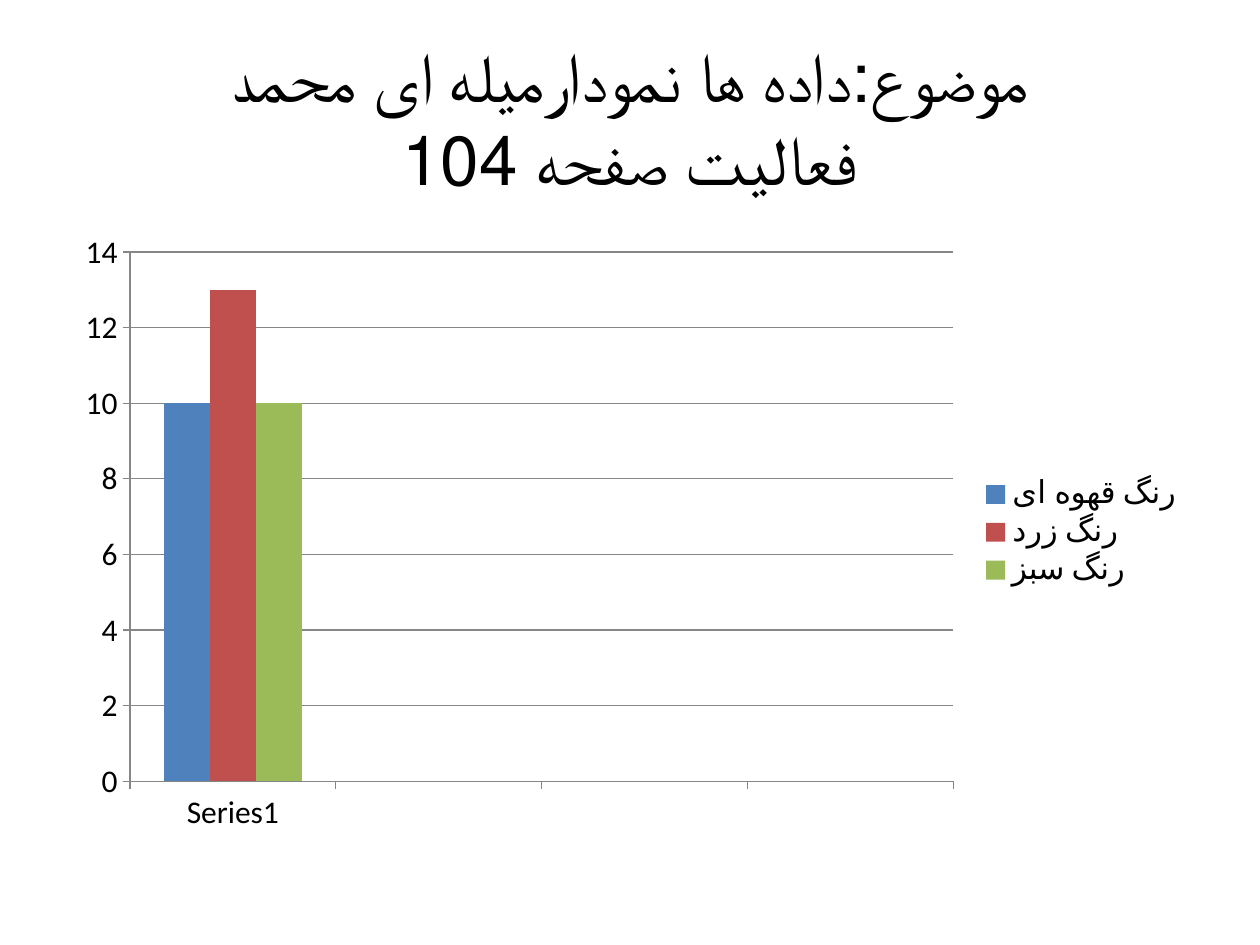
from pptx import Presentation
from pptx import util as u
from pptx.chart.data import CategoryChartData
from pptx.dml.color import RGBColor
from pptx.enum import chart as ch, text


def colour(value):
    return RGBColor.from_string(value)


def set_values(target, values):
    for name, value in values.items():
        setattr(target, name, value)


class SlideBuilder:
    font = "Calibri"
    ink = "000000"
    rule = "868686"

    def __init__(self, deck):
        self.slide = deck.slides.add_slide(deck.slide_layouts[6])

    def style_font(self, font, size):
        set_values(font, {"name": self.font, "size": u.Pt(size)})
        font.color.rgb = colour(self.ink)

    def style_line(self, line):
        line.color.rgb = colour(self.rule)
        line.width = u.Pt(0.75)

    def title(self, place, lines, size):
        box = self.slide.shapes.add_textbox(*map(u.Inches, place))
        set_values(box.text_frame, {
            "word_wrap": True,
            "vertical_anchor": text.MSO_ANCHOR.MIDDLE,
        })
        para = box.text_frame.paragraphs[0]
        para.alignment = text.PP_ALIGN.CENTER
        para._p.get_or_add_pPr().set("rtl", "1")
        for index, line in enumerate(lines):
            if index:
                para.add_line_break()
            span = para.add_run()
            span.text = line
            self.style_font(span.font, size)

    def column_chart(self, place, categories, series, size):
        data = CategoryChartData()
        data.categories = categories
        for name, value, _ in series:
            data.add_series(name, [value] + [None] * (len(categories) - 1))
        frame = self.slide.shapes.add_chart(
            ch.XL_CHART_TYPE.COLUMN_CLUSTERED, *map(u.Inches, place), data)
        chart = frame.chart
        set_values(chart, {"has_title": False, "has_legend": True})
        set_values(chart.legend, {
            "position": ch.XL_LEGEND_POSITION.RIGHT,
            "include_in_layout": False,
        })
        self.style_font(chart.font, size)
        plot = chart.plots[0]
        set_values(plot, {"gap_width": 150, "overlap": 0, "vary_by_categories": False})
        for bars, (_, _, fill) in zip(plot.series, series):
            bars.format.fill.solid()
            bars.format.fill.fore_color.rgb = colour(fill)
        for axis in (chart.category_axis, chart.value_axis):
            axis.major_tick_mark = ch.XL_TICK_MARK.OUTSIDE
            self.style_line(axis.format.line)
        chart.value_axis.has_major_gridlines = True
        self.style_line(chart.value_axis.major_gridlines.format.line)


def main():
    deck = Presentation()
    set_values(deck, {"slide_width": u.Inches(10), "slide_height": u.Inches(7.5)})
    page = SlideBuilder(deck)
    page.title(
        (0.5, 0.3, 9, 1.25),
        ["موضوع:داده ها نمودارمیله ای محمد", "فعالیت صفحه 104"],
        39.6)
    page.column_chart(
        (0.5, 1.75, 9, 4.95),
        ["Series1", "", "", ""],
        [
            ("رنگ قهوه ای", 10, "4F81BD"),
            ("رنگ زرد", 13, "C0504D"),
            ("رنگ سبز", 10, "9BBB59"),
        ],
        18)
    deck.save("out.pptx")


if __name__ == "__main__":
    main()
